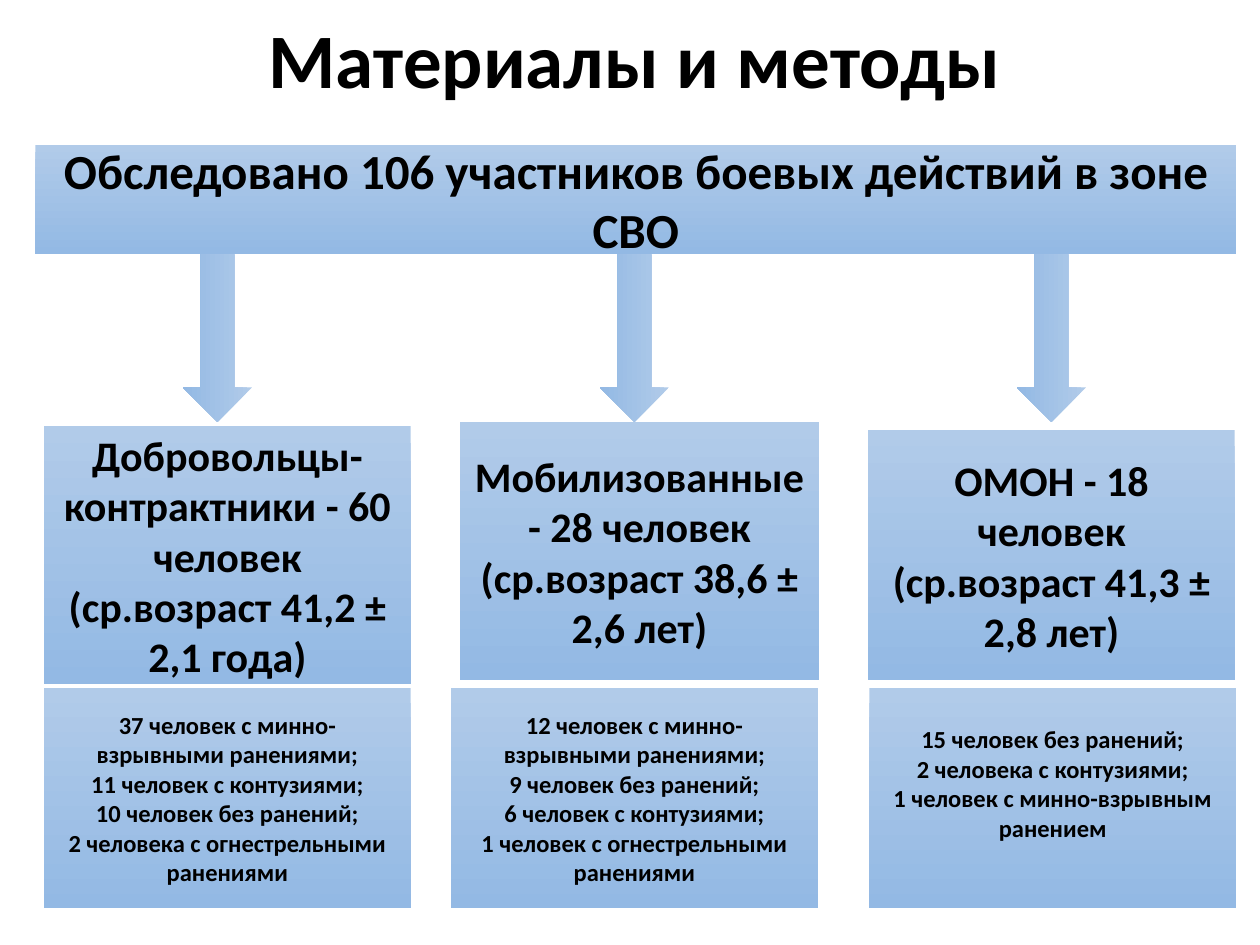
"""Build the study-groups slide: header, three arrows, three group columns."""
from pptx import Presentation
from pptx.dml.color import RGBColor
from pptx.enum import shapes, text
from pptx.util import Pt

FONT, INK = "Calibri", "000000"
GRADIENT = ("B1CBE9", "93B9E4")
LINE_HEIGHT = 17

TITLE = "Материалы и методы"
HEADER = "Обследовано 106 участников боевых действий в зоне СВО"
GROUPS = [
    {
        "summary": "Добровольцы-контрактники - 60 человек (ср.возраст 41,2 ± 2,1 года)",
        "summary_box": (25.2, 243.5, 209.5, 147.6),
        "injuries": [
            "37 человек с минно-взрывными ранениями;",
            "11 человек с контузиями;",
            "10 человек без ранений;",
            "2 человека с огнестрельными ранениями",
        ],
        "injuries_left": 25.2,
        "lift": 0,
    },
    {
        "summary": "Мобилизованные - 28 человек (ср.возраст 38,6 ± 2,6 лет)",
        "summary_box": (262.8, 241.2, 205.2, 147.6),
        "injuries": [
            "12 человек с минно-взрывными ранениями;",
            "9 человек без ранений;",
            "6 человек с контузиями;",
            "1 человек с огнестрельными ранениями",
        ],
        "injuries_left": 257.8,
        "lift": 0,
    },
    {
        "summary": "ОМОН - 18 человек (ср.возраст 41,3 ± 2,8 лет)",
        "summary_box": (496.1, 245.5, 209.5, 143.3),
        "injuries": [
            "15 человек без ранений;",
            "2 человека с контузиями;",
            "1 человек с минно-взрывным ранением",
        ],
        "injuries_left": 496.8,
        "lift": LINE_HEIGHT,
    },
]
ARROW_LEFT, ARROW_TOP, ARROW_STEP = 76.3, 173.5, 238.3
ARROW_LENGTH, ARROW_WIDTH = 95.8, 39.6
INJURIES_TOP, INJURIES_WIDTH, INJURIES_HEIGHT = 393.1, 209.5, 126


def rgb(value):
    """Return the colour for a hex string."""
    return RGBColor.from_string(value)


def write(shape, lines, size):
    """Write centred bold paragraphs into a shape."""
    frame = shape.text_frame
    frame.word_wrap = True
    frame.vertical_anchor = text.MSO_ANCHOR.MIDDLE
    for index, line in enumerate(lines):
        paragraph = frame.add_paragraph() if index else frame.paragraphs[0]
        paragraph.alignment = text.PP_ALIGN.CENTER
        run = paragraph.add_run()
        run.text = line
        run.font.name, run.font.size, run.font.bold = FONT, Pt(size), True
        run.font.color.rgb = rgb(INK)


def add_gradient_shape(slide, preset, box):
    """Add a borderless shape shaded from top to bottom."""
    shape = slide.shapes.add_shape(preset, *map(Pt, box))
    shape.shadow.inherit = False
    shape.line.fill.background()
    shape.fill.gradient()
    shape.fill.gradient_angle = 270
    for stop, shade in zip(shape.fill.gradient_stops, GRADIENT):
        stop.color.rgb = rgb(shade)
    return shape


def add_panel(slide, box, lines, size):
    """Add a shaded rectangle with text."""
    panel = add_gradient_shape(slide, shapes.MSO_SHAPE.RECTANGLE, box)
    write(panel, lines, size)
    return panel


def main():
    """Lay out the slide and save it."""
    deck = Presentation()
    deck.slide_width, deck.slide_height = Pt(720), Pt(540)
    slide = deck.slides.add_slide(deck.slide_layouts[6])

    title = slide.shapes.add_textbox(Pt(38.9), Pt(2.2), Pt(648), Pt(61.9))
    write(title, [TITLE], 44)
    add_panel(slide, (20.2, 82.8, 686.2, 62.6), [HEADER], 28)

    for column, group in enumerate(GROUPS):
        arrow_box = (ARROW_LEFT + column * ARROW_STEP, ARROW_TOP, ARROW_LENGTH, ARROW_WIDTH)
        arrow = add_gradient_shape(slide, shapes.MSO_SHAPE.RIGHT_ARROW, arrow_box)
        arrow.rotation = 90
        add_panel(slide, group["summary_box"], [group["summary"]], 24)
        injuries_box = (group["injuries_left"], INJURIES_TOP, INJURIES_WIDTH, INJURIES_HEIGHT)
        injuries = add_panel(slide, injuries_box, group["injuries"], 14)
        injuries.text_frame.margin_bottom = Pt(3.6 + group["lift"])

    deck.save("out.pptx")


if __name__ == "__main__":
    main()
